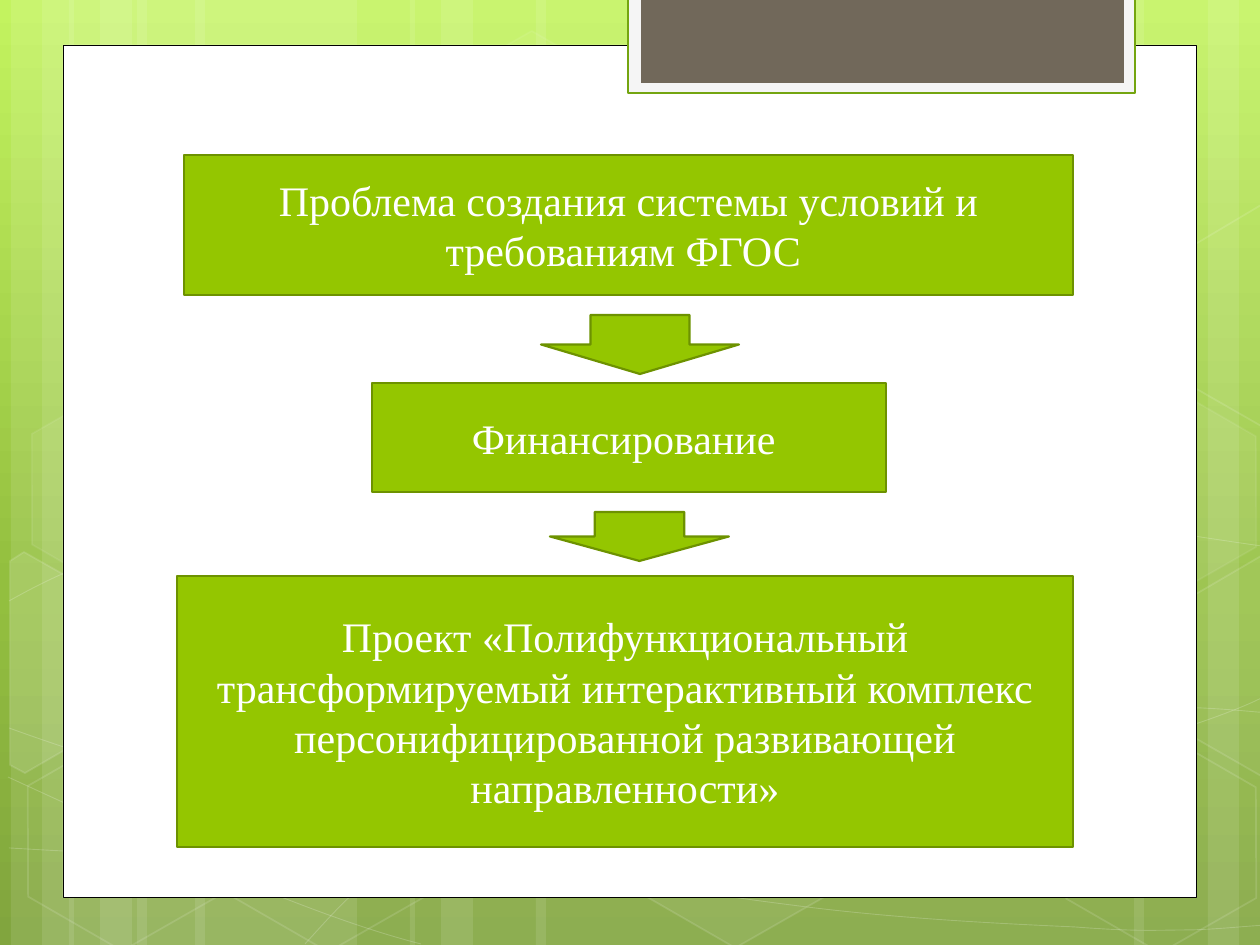
from copy import deepcopy
from typing import NamedTuple

from lxml.etree import SubElement
from pptx import Presentation
from pptx.dml.color import RGBColor
from pptx.enum.shapes import MSO_SHAPE as Kind
from pptx.enum.text import MSO_ANCHOR as Anchor, PP_ALIGN as Align
from pptx.oxml.ns import qn
from pptx.util import Pt

SCALE = 914400 / 126  # EMU in one px
WIDE, HIGH = 1260, 945
WHITE, GREEN, EDGE = "FFFFFF", "94C600", "6D9200"

Point = tuple[int, int]


class Style(NamedTuple):
    fill: str | None = None
    line: str | None = None
    width: float = 1.25
    clear: int = 100  # opacity of the fill, percent
    faint: int = 100  # opacity of the line, percent


class Item(NamedTuple):
    x: int
    y: int
    w: int
    h: int
    style: Style
    kind: Kind = Kind.RECTANGLE
    text: str = ""


class Hex(NamedTuple):
    x: int
    y: int
    fill: int
    line: int


class Poly(NamedTuple):
    fill: int
    points: list[Point]


def emu(px: int) -> int:
    return round(px * SCALE)


def paint(fill, color: str, alpha: int = 100) -> None:
    fill.solid()
    fill.fore_color.rgb = RGBColor.from_string(color)
    if alpha < 100:
        for node in fill._xPr.iter(qn("a:srgbClr")):
            SubElement(node, qn("a:alpha"), val=str(alpha * 1000))


def dress(shape, style: Style) -> None:
    shape.shadow.inherit = False
    if style.fill:
        paint(shape.fill, style.fill, style.clear)
    else:
        shape.fill.background()
    if style.line:
        shape.line.width = Pt(style.width)
        paint(shape.line.fill, style.line, style.faint)
    else:
        shape.line.fill.background()


def write(shape, text: str, *, size: int = 24, color: str = WHITE,
          font: str = "Times New Roman") -> None:
    frame = shape.text_frame
    frame.word_wrap = True
    frame.vertical_anchor = Anchor.MIDDLE
    para = frame.paragraphs[0]
    para.alignment = Align.CENTER
    run = para.add_run()
    run.text = text
    run.font.name, run.font.size = font, Pt(size)
    run.font.color.rgb = RGBColor.from_string(color)


def draw(shapes, item: Item):
    box = shapes.add_shape(item.kind, *map(emu, item[:4]))
    dress(box, item.style)
    if item.text:
        write(box, item.text)
    return box


def glass(fill: int, line: int) -> Style:
    """White see-through style; a fill of 0 means none."""
    return Style(WHITE if fill else None, WHITE, 1, fill, line)


def trace(shapes, points: list[Point], style: Style, close: bool):
    pen = shapes.build_freeform(*points[0], scale=SCALE)
    pen.add_line_segments(points[1:], close=close)
    shape = pen.convert_to_shape()
    dress(shape, style)
    return shape


def bend(shape) -> None:
    """Turn every three line segments into one cubic curve."""
    route = shape.element.xpath(".//a:path")[0]
    for i, node in enumerate(route.findall(qn("a:lnTo"))):
        if i % 3 == 0:
            curve = SubElement(route, qn("a:cubicBezTo"))
        curve.append(node[0])
        route.remove(node)


def shade(slide, stops: list[tuple[str, float]]) -> None:
    """Fill the background with a gradient from top to bottom."""
    fill = slide.background.fill
    fill.gradient()
    fill.gradient_angle = 270
    first = slide.element.xpath(".//p:bg//a:gs")[0]
    first.addnext(deepcopy(first))
    for stop, (color, place) in zip(fill.gradient_stops, stops):
        stop.color.rgb = RGBColor.from_string(color)
        stop.position = place


BANDS = [(137, 220), (11, 63), (42, 105), (195, 220), (69, 63), (100, 105),
         (924, 220), (1208, 63), (1134, 105), (536, 388), (410, 63), (441, 105)]

CURVES = [
    [(9, 848), (77, 852), (145, 856), (239, 854), (334, 853), (451, 851),
     (577, 838), (703, 825), (882, 801), (998, 777), (1113, 753), (1231, 716),
     (1269, 694)],
    [(9, 601), (45, 581), (82, 562), (152, 543), (224, 524), (326, 496),
     (437, 488), (549, 480), (685, 478), (824, 488), (963, 498), (1193, 537),
     (1269, 547)],
    [(8, 777), (160, 847), (311, 916), (421, 944)],
    [(9, 728), (48, 742), (88, 756), (161, 776), (234, 795), (344, 827),
     (450, 848), (554, 869), (687, 892), (791, 905), (896, 919), (1008, 924),
     (1075, 927), (1140, 932), (1158, 930), (1191, 930), (1223, 929),
     (1246, 926), (1269, 925)],
    [(305, 944), (328, 919), (350, 893), (381, 871), (412, 848), (454, 825),
     (489, 805), (524, 787), (546, 780), (592, 767), (638, 755), (722, 738),
     (766, 728), (811, 719), (818, 719), (857, 717), (896, 713), (958, 709),
     (1000, 708), (1045, 707), (1116, 708), (1116, 708), (1144, 708),
     (1173, 708), (1201, 708), (1223, 709), (1245, 711), (1256, 712),
     (1268, 713), (1264, 712), (1268, 713)],
]

HEXES = [Hex(421, 45, 4, 8), Hex(626, 742, 6, 12), Hex(13, 745, 0, 12),
         Hex(17, 393, 7, 8), Hex(219, 746, 0, 12), Hex(1051, 747, 0, 12),
         Hex(1051, 396, 7, 8)]

POLYS = [
    Poly(10, [(10, 561), (24, 552), (121, 607), (120, 718), (25, 773), (10, 765)]),
    Poly(4, [(1167, 611), (1261, 556), (1271, 562), (1271, 772), (1263, 777),
             (1167, 722)]),
    Poly(0, [(1167, 261), (1261, 205), (1273, 212), (1271, 422), (1263, 427),
             (1167, 372)]),
]

STEP = Style(GREEN, EDGE)
ITEMS = [
    Item(63, 45, 1134, 853, Style(WHITE, "000000", 0.5)),
    Item(628, -3, 507, 96, Style("F5F5F5", "74A510")),
    Item(641, -3, 483, 86, Style("71685A")),
    Item(184, 155, 889, 140, STEP,
         text="Проблема создания системы условий и требованиям ФГОС "),
    Item(541, 315, 198, 59, STEP, Kind.DOWN_ARROW),
    Item(372, 383, 514, 109, STEP, text="Финансирование "),
    Item(550, 512, 179, 49, STEP, Kind.DOWN_ARROW),
    Item(177, 576, 896, 271, STEP,
         text="Проект «Полифункциональный трансформируемый интерактивный "
              "комплекс персонифицированной развивающей направленности»"),
]


def main() -> None:
    deck = Presentation()
    deck.slide_width, deck.slide_height = emu(WIDE), emu(HIGH)
    slide = deck.slides.add_slide(deck.slide_layouts[6])
    shapes = slide.shapes
    shade(slide, [("C3F35F", 0), ("93BF3F", 0.62), ("81A53E", 1)])
    for x, w in BANDS:
        draw(shapes, Item(x, 0, w, HIGH, Style(WHITE, clear=10)))
    for knots in CURVES:
        bend(trace(shapes, knots, Style(None, WHITE, 0.5, faint=20), False))
    for tile in HEXES:
        style = glass(tile.fill, tile.line)
        cell = draw(shapes, Item(tile.x, tile.y, 220, 192, style, Kind.HEXAGON))
        cell.rotation = 30
        cell.adjustments[0], cell.adjustments[1] = 0.29, 1.15
    for poly in POLYS:
        trace(shapes, poly.points, glass(poly.fill, 12), True)
    for item in ITEMS:
        draw(shapes, item)
    deck.save("out.pptx")


if __name__ == "__main__":
    main()
